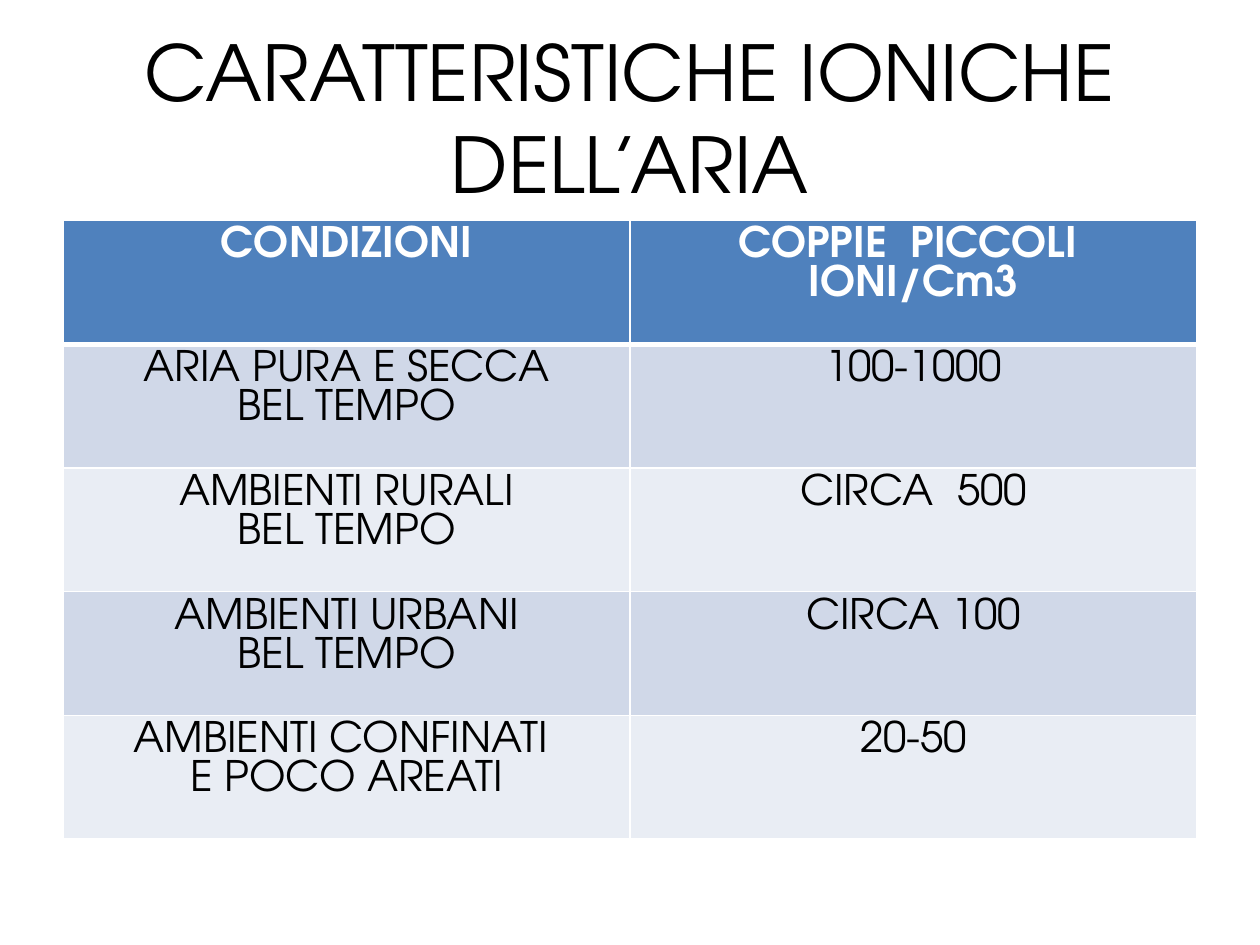
"""Build a slide with a table of the ionic characteristics of air."""
from dataclasses import dataclass

from pptx import Presentation
from pptx.dml.color import RGBColor as Rgb
from pptx.enum.text import MSO_ANCHOR as Anchor, PP_ALIGN as Align
from pptx.oxml import parse_xml
from pptx.oxml.ns import nsdecls
from pptx.util import Inches, Pt


@dataclass(frozen=True)
class Theme:
    font: str = "TeX Gyre Adventor"
    title_size: int = 44
    table_size: int = 24
    ink: str = "000000"
    white: str = "FFFFFF"
    header: str = "4F81BD"
    bands: tuple = ("D0D8E8", "E9EDF4")
    rule: int = 1
    header_rule: int = 3


THEME = Theme()
TITLE = "CARATTERISTICHE IONICHE DELL’ARIA"
CONDITIONS = [
    ("CONDIZIONI", "COPPIE  PICCOLI  IONI/Cm3"),
    ("ARIA PURA E SECCA\nBEL TEMPO", "100-1000"),
    ("AMBIENTI RURALI\nBEL TEMPO", "CIRCA  500"),
    ("AMBIENTI URBANI\nBEL TEMPO", "CIRCA 100"),
    ("AMBIENTI CONFINATI \nE POCO AREATI", "20-50"),
]


def write_text(frame, text, size, color, bold=False):
    frame.word_wrap = True
    frame.text = text
    for paragraph in frame.paragraphs:
        paragraph.alignment = Align.CENTER
        font = paragraph.font
        font.name, font.size, font.bold = THEME.font, Pt(size), bold
        font.color.rgb = Rgb.from_string(color)


def set_borders(cell, widths):
    properties = cell._tc.get_or_add_tcPr()
    for position, (side, width) in enumerate(widths.items()):
        properties.insert(position, parse_xml(
            f'<a:ln{side} {nsdecls("a")} w="{Pt(width)}"><a:solidFill>'
            f'<a:srgbClr val="{THEME.white}"/></a:solidFill></a:ln{side}>'))


def add_title(slide):
    title = slide.shapes.add_textbox(Inches(0.5), Inches(0.3), Inches(9), Inches(1.25))
    title.text_frame.vertical_anchor = Anchor.MIDDLE
    write_text(title.text_frame, TITLE, THEME.title_size, THEME.ink)


def style_cell(cell, text, row):
    is_header = row == 0
    fill = THEME.header if is_header else THEME.bands[(row - 1) % 2]
    cell.fill.solid()
    cell.fill.fore_color.rgb = Rgb.from_string(fill)
    write_text(cell.text_frame, text, THEME.table_size,
               THEME.white if is_header else THEME.ink, is_header)
    set_borders(cell, {
        "L": THEME.rule,
        "R": THEME.rule,
        "T": THEME.header_rule if row == 1 else THEME.rule,
        "B": THEME.header_rule if is_header else THEME.rule,
    })


def add_conditions_table(slide):
    table = slide.shapes.add_table(
        len(CONDITIONS), 2, Inches(0.5), Inches(1.75), Inches(9), Inches(4.91)).table
    for row, texts in enumerate(CONDITIONS):
        for column, text in enumerate(texts):
            style_cell(table.cell(row, column), text, row)


def main():
    deck = Presentation()
    deck.slide_width, deck.slide_height = Inches(10), Inches(7.5)
    slide = deck.slides.add_slide(deck.slide_layouts[6])
    add_title(slide)
    add_conditions_table(slide)
    deck.save("out.pptx")


if __name__ == "__main__":
    main()
